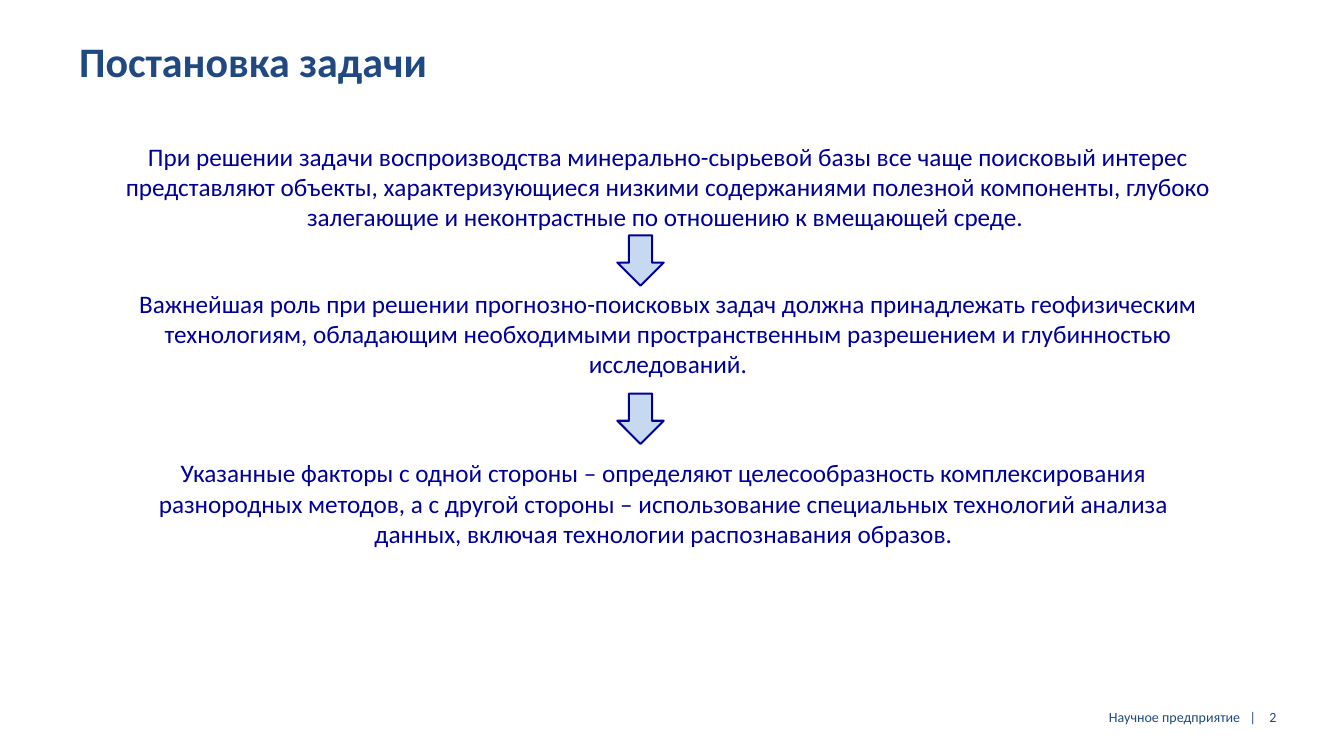
import pptx
import pptx.util
import pptx.dml.color
import pptx.enum.shapes
import pptx.enum.text

Inches = pptx.util.Inches
Pt = pptx.util.Pt
ALIGN = pptx.enum.text.PP_ALIGN
ANCHOR = pptx.enum.text.MSO_ANCHOR

COLORS = {"heading": "204982", "body": "000099", "arrow": "C6D9F1"}
FONT = "Calibri"
STATEMENTS = [
    (1.84, 2.75, 22.83,
     "При решении задачи воспроизводства минерально-сырьевой базы все чаще поисковый интерес "
     "представляют объекты, характеризующиеся низкими содержаниями полезной компоненты, глубоко "
     "залегающие и неконтрастные по отношению к вмещающей среде. "),
    (2.59, 5.67, 21.33,
     "Важнейшая роль при решении прогнозно-поисковых задач должна принадлежать геофизическим "
     "технологиям, обладающим необходимыми пространственным разрешением и глубинностью "
     "исследований."),
    (2.5, 9.03, 21.33,
     "Указанные факторы с одной стороны – определяют целесообразность комплексирования "
     "разнородных методов, а с другой стороны – использование специальных технологий анализа "
     "данных, включая технологии распознавания образов."),
]
ARROW_TOPS = [4.67, 7.81]


def rgb(name):
    """Return the palette colour with this name."""
    return pptx.dml.color.RGBColor.from_string(COLORS[name])


def add_text(s, box, text, size, color, align=ALIGN.LEFT, anchor=ANCHOR.TOP,
             margins=(0.1, 0.05), bold=False):
    """Add a wrapped one-paragraph text box."""
    tf = s.shapes.add_textbox(*map(Inches, box)).text_frame
    tf.word_wrap = True
    tf.vertical_anchor = anchor
    tf.margin_left = tf.margin_right = Inches(margins[0])
    tf.margin_top = tf.margin_bottom = Inches(margins[1])
    p = tf.paragraphs[0]
    p.text = text
    p.alignment = align
    p.font.name = FONT
    p.font.size = Pt(size)
    p.font.bold = bold
    p.font.color.rgb = rgb(color)


def add_title(s, box, text):
    """Add the slide heading."""
    add_text(s, box, text, 60, "heading", anchor=ANCHOR.MIDDLE, margins=(0.24, 0.12), bold=True)


def add_footer(s, left, top, width, height, owner, number):
    """Add the owner line and the page number to its right."""
    number_width = 1.72
    owner_width = 5.83
    style = {"anchor": ANCHOR.MIDDLE, "margins": (0.24, 0.12)}
    add_text(s, (left, top, owner_width, height), owner, 20, "heading", ALIGN.RIGHT, **style)
    add_text(s, (left + width - number_width, top, number_width, height), number, 20,
             "heading", **style)


def add_arrow(s, left, top, width, height):
    """Add an outlined arrow pointing down."""
    sp = s.shapes.add_shape(pptx.enum.shapes.MSO_SHAPE.DOWN_ARROW,
                            *map(Inches, (left, top, width, height)))
    sp.shadow.inherit = False
    sp.fill.solid()
    sp.fill.fore_color.rgb = rgb("arrow")
    sp.line.color.rgb = rgb("body")
    sp.line.width = Pt(3)


def add_reasoning(s):
    """Add the chain of statements joined by arrows."""
    for left, top, width, text in STATEMENTS:
        add_text(s, (left, top, width, 1.92), text, 36, "body", ALIGN.CENTER)
    for top in ARROW_TOPS:
        add_arrow(s, 12.25, top, 0.92, 1)


def main():
    """Build and save the presentation."""
    prs = pptx.Presentation()
    prs.slide_width = Inches(26.67)
    prs.slide_height = Inches(15)
    s = prs.slides.add_slide(prs.slide_layouts[6])
    add_title(s, (1.33, 0.5, 18.17, 1.4), "Постановка задачи")
    add_reasoning(s)
    add_footer(s, 19.34, 13.87, 7.33, 0.72, "Научное предприятие   |", "2")
    prs.save("out.pptx")


if __name__ == "__main__":
    main()
